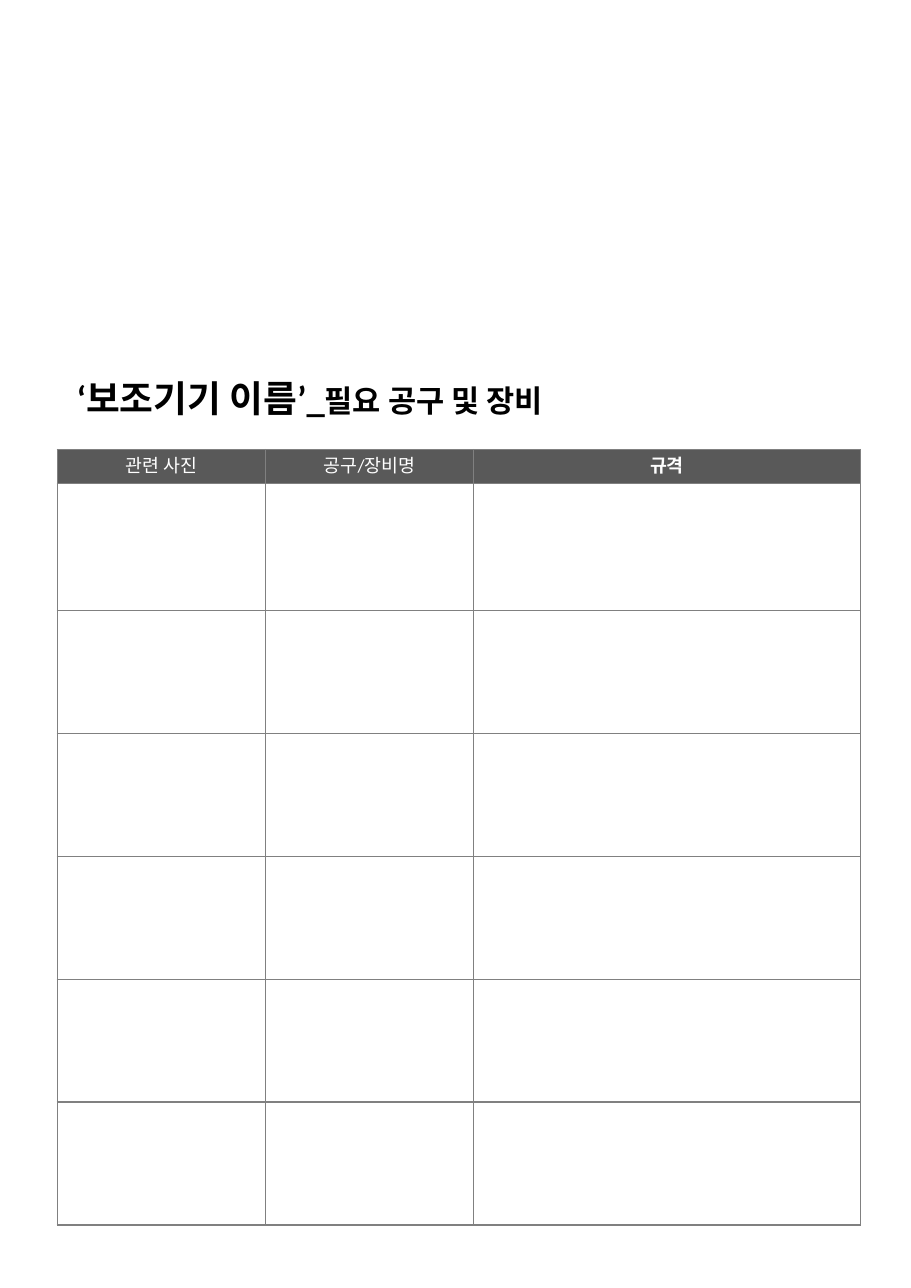
from lxml.etree import SubElement
from pptx import Presentation
from pptx.dml.color import RGBColor
from pptx.enum.text import MSO_ANCHOR, MSO_AUTO_SIZE, PP_ALIGN
from pptx.oxml.ns import qn
from pptx.util import Pt

PX = 9144
COLORS = {"ink": "000000", "header": "595959", "paper": "FFFFFF", "grid": "808080"}
LATIN, KOREAN = "Calibri", "Noto Sans CJK KR"
HEADERS = [("관련 사진", False), ("공구/장비명", False), ("규격", True)]
COLUMN_WIDTHS = [189, 189, 351]
TOP_ROWS = [31, 115]
EQUAL_ROWS = 5


def scaled(box):
    return [length * PX for length in box]


def style_span(span, size, color, bold, typeface=LATIN):
    font = span.font
    font.size, font.bold, font.name = Pt(size), bold, typeface
    font.color.rgb = RGBColor.from_string(COLORS[color])
    SubElement(font._element, qn("a:ea")).set("typeface", typeface)


def add_heading(page, box):
    title = page.shapes.title
    title.left, title.top, title.width, title.height = scaled(box)
    frame = title.text_frame
    frame.auto_size = MSO_AUTO_SIZE.NONE
    frame.word_wrap = True
    frame.vertical_anchor = MSO_ANCHOR.MIDDLE
    para = frame.paragraphs[0]
    para.alignment = PP_ALIGN.LEFT
    for text, size, typeface in [
        (" ‘보조기기 이름’_", 24, LATIN),
        ("필요 공구 및 장비", 20, KOREAN),
    ]:
        span = para.add_run()
        span.text = text
        style_span(span, size, "ink", True, typeface)


def outline_cell(cell):
    properties = cell._tc.get_or_add_tcPr()
    for position, side in enumerate(["lnL", "lnR", "lnT", "lnB"]):
        line = properties.makeelement(qn(f"a:{side}"), {"w": str(Pt(1))})
        fill = SubElement(line, qn("a:solidFill"))
        SubElement(fill, qn("a:srgbClr")).set("val", COLORS["grid"])
        properties.insert(position, line)


def add_tool_table(page, box):
    height = box[3]
    equal_height = (height - sum(TOP_ROWS)) * PX // EQUAL_ROWS
    row_heights = scaled(TOP_ROWS) + [equal_height] * EQUAL_ROWS
    table = page.shapes.add_table(
        len(row_heights), len(COLUMN_WIDTHS), *scaled(box)
    ).table
    for column, width in zip(table.columns, COLUMN_WIDTHS):
        column.width = width * PX
    for row, row_height in zip(table.rows, row_heights):
        row.height = row_height
    for cell in table.iter_cells():
        cell.fill.solid()
        cell.fill.fore_color.rgb = RGBColor.from_string(COLORS["paper"])
        outline_cell(cell)
    for cell, (label, bold) in zip(table.rows[0].cells, HEADERS):
        cell.fill.fore_color.rgb = RGBColor.from_string(COLORS["header"])
        cell.vertical_anchor = MSO_ANCHOR.MIDDLE
        para = cell.text_frame.paragraphs[0]
        para.text = label
        para.alignment = PP_ALIGN.CENTER
        style_span(para.runs[0], 12, "paper", bold)


def main():
    deck = Presentation()
    deck.slide_width, deck.slide_height = scaled([827, 1169])
    page = deck.slides.add_slide(deck.slide_layouts[5])
    add_heading(page, [52, 333, 629, 56])
    add_tool_table(page, [52, 408, sum(COLUMN_WIDTHS), 704])
    deck.save("out.pptx")


if __name__ == "__main__":
    main()
